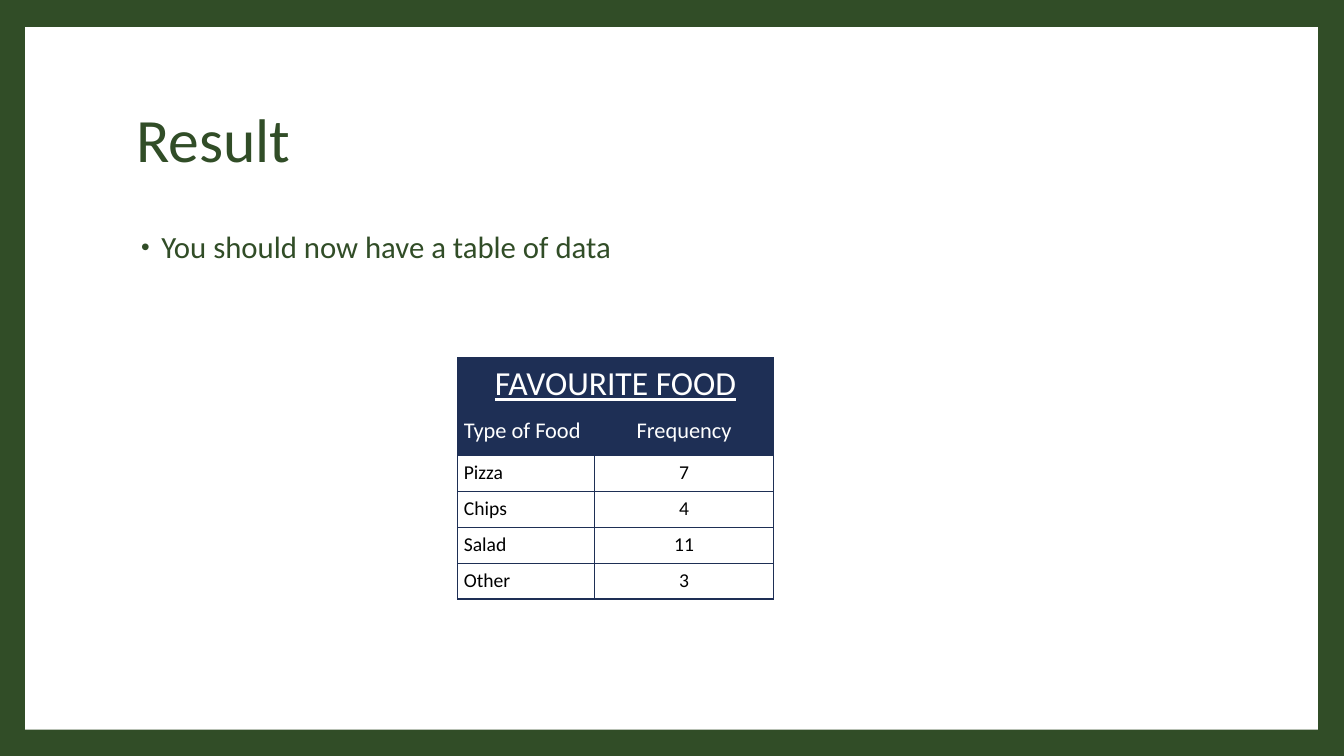
from lxml import etree
from pptx import Presentation
from pptx.dml.color import RGBColor
from pptx.enum import shapes, text
from pptx.oxml import ns
from pptx.util import Inches, Pt

GREEN, NAVY, WHITE, BLACK = "314D27", "1E2F55", "FFFFFF", "000000"
COLUMN_WIDTHS = (1.36, 1.77)
ROW_HEIGHTS = (0.44, 0.44, 0.31, 0.31, 0.31, 0.31)
HEADINGS = ("Type of Food", "Frequency")
FOODS = (("Pizza", 7), ("Chips", 4), ("Salad", 11), ("Other", 3))


def color(hex_string):
    return RGBColor.from_string(hex_string)


def fill_solid(fill, hex_string):
    fill.solid()
    fill.fore_color.rgb = color(hex_string)


def add_child(parent, tag, **attributes):
    return etree.SubElement(parent, ns.qn(tag), attributes)


def set_font(paragraph, size, hex_string):
    paragraph.font.name = "Calibri"
    paragraph.font.size = Pt(size)
    paragraph.font.color.rgb = color(hex_string)


def add_panel(slide):
    panel = slide.shapes.add_shape(
        shapes.MSO_SHAPE.RECTANGLE, Inches(0.25), Inches(0.27), Inches(12.82), Inches(6.97))
    panel.shadow.inherit = False
    fill_solid(panel.fill, WHITE)
    panel.line.fill.background()
    slide.shapes._spTree.insert(2, panel._element)


def fill_placeholder(placeholder, words, top, height, size, anchor):
    placeholder.left, placeholder.top = Inches(1.25), Inches(top)
    placeholder.width, placeholder.height = Inches(10.8), Inches(height)
    frame = placeholder.text_frame
    frame.text = words
    frame.auto_size = text.MSO_AUTO_SIZE.NONE
    frame.vertical_anchor = anchor
    paragraph = frame.paragraphs[0]
    paragraph.alignment = text.PP_ALIGN.LEFT
    paragraph.line_spacing = 0.9
    set_font(paragraph, size, GREEN)
    return paragraph


def add_bullet(paragraph):
    paragraph.space_before = Pt(14)
    properties = paragraph._p.get_or_add_pPr()
    properties.set("marL", str(Inches(0.25)))
    properties.set("indent", str(Inches(-0.2)))
    add_child(add_child(properties, "a:buClr"), "a:srgbClr", val=GREEN)
    add_child(properties, "a:buSzPct", val="80000")
    add_child(properties, "a:buFont", typeface="Arial")
    add_child(properties, "a:buChar", char="•")


def add_borders(cell):
    properties = cell._tc.get_or_add_tcPr()
    for side in ("a:lnL", "a:lnR", "a:lnT", "a:lnB"):
        line = add_child(properties, side, w=str(Pt(1)))
        add_child(add_child(line, "a:solidFill"), "a:srgbClr", val=NAVY)


def format_cell(cell, words, size, centered, header):
    cell.margin_left = cell.margin_right = Inches(0.06)
    cell.margin_top = cell.margin_bottom = Inches(0.06)
    add_borders(cell)
    if header:
        fill_solid(cell.fill, NAVY)
    else:
        cell.fill.background()
    cell.text = words
    paragraph = cell.text_frame.paragraphs[0]
    paragraph.alignment = text.PP_ALIGN.CENTER if centered else text.PP_ALIGN.LEFT
    set_font(paragraph, size, WHITE if header else BLACK)
    paragraph.font.bold = False


def add_food_table(slide):
    table = slide.shapes.add_table(
        len(ROW_HEIGHTS), len(COLUMN_WIDTHS), Inches(4.54), Inches(3.55),
        Inches(sum(COLUMN_WIDTHS)), Inches(sum(ROW_HEIGHTS))).table
    table.first_row = table.horz_banding = False
    for column, width in zip(table.columns, COLUMN_WIDTHS):
        column.width = Inches(width)
    for row, height in zip(table.rows, ROW_HEIGHTS):
        row.height = Inches(height)

    heading = table.cell(0, 0)
    heading.merge(table.cell(0, 1))
    format_cell(heading, "FAVOURITE FOOD", 24, True, True)
    heading.text_frame.paragraphs[0].font.underline = True
    add_borders(table.cell(0, 1))
    for row, values in enumerate((HEADINGS, *FOODS), start=1):
        header = row == 1
        for column, value in enumerate(values):
            format_cell(table.cell(row, column), str(value),
                        16 if header else 14, column == 1, header)


def main():
    """Build the survey result slide and save it."""
    presentation = Presentation()
    presentation.slide_width, presentation.slide_height = Inches(13.33), Inches(7.5)
    slide = presentation.slides.add_slide(presentation.slide_layouts[1])
    fill_solid(slide.background.fill, GREEN)
    add_panel(slide)
    fill_placeholder(slide.shapes.title, "Result", 0.67, 1.48, 44, text.MSO_ANCHOR.MIDDLE)
    add_bullet(fill_placeholder(slide.placeholders[1], "You should now have a table of data",
                                2.25, 4.42, 22, text.MSO_ANCHOR.TOP))
    add_food_table(slide)
    presentation.save("out.pptx")


if __name__ == "__main__":
    main()
